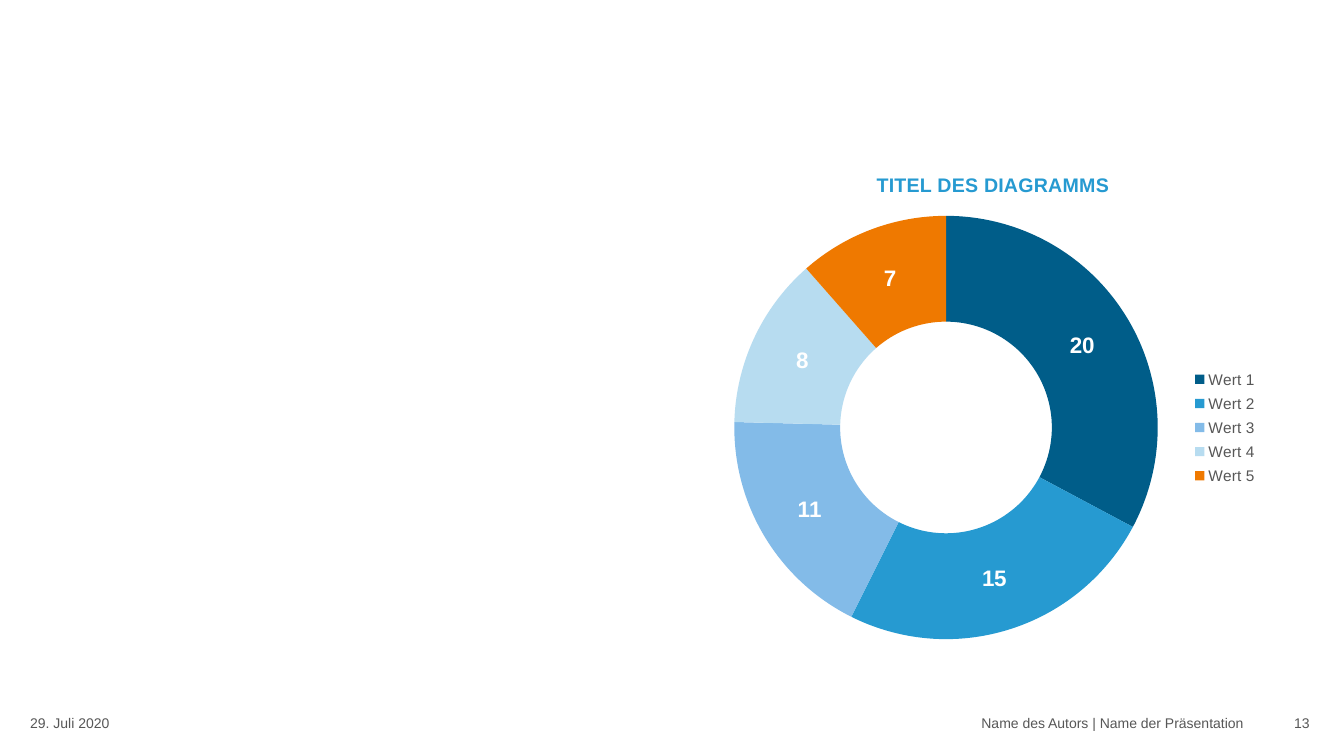
"""Build a slide with a doughnut chart and a footer line."""
from dataclasses import dataclass

from pptx import Presentation
from pptx.chart.chart import Chart
from pptx.chart.data import CategoryChartData
from pptx.dml.color import RGBColor
from pptx.enum.chart import XL_CHART_TYPE as ChartType, XL_LEGEND_POSITION as LegendPosition
from pptx.enum.text import MSO_ANCHOR as Anchor, PP_ALIGN as Align
from pptx.oxml import parse_xml
from pptx.oxml.ns import nsdecls, qn
from pptx.slide import Slide
from pptx.text.text import Font
from pptx.util import Inches, Pt

FONT_NAME = "Arial"
GREY = RGBColor(0x57, 0x57, 0x57)
WHITE = RGBColor(0xFF, 0xFF, 0xFF)
DARK_BLUE = RGBColor(0x00, 0x5D, 0x89)
BLUE = RGBColor(0x26, 0x9A, 0xD1)
SOFT_BLUE = RGBColor(0x83, 0xBB, 0xE8)
PALE_BLUE = RGBColor(0xB7, 0xDC, 0xF0)
ORANGE = RGBColor(0xEF, 0x79, 0x00)
FOOTER_TOP = 7.09
FOOTER_HEIGHT = 0.39
HOLE_PERCENT = 55


@dataclass(frozen=True)
class FooterField:
    text: str
    left: float
    width: float
    align: Align


@dataclass(frozen=True)
class Segment:
    label: str
    value: int
    color: RGBColor


FOOTER_FIELDS = (
    FooterField("29. Juli 2020", 0.3, 2.36, Align.LEFT),
    FooterField("Name des Autors | Name der Präsentation", 2.49, 9.84, Align.RIGHT),
    FooterField("13", 12.36, 0.63, Align.RIGHT),
)
SEGMENTS = (
    Segment("Wert 1", 20, DARK_BLUE),
    Segment("Wert 2", 15, BLUE),
    Segment("Wert 3", 11, SOFT_BLUE),
    Segment("Wert 4", 8, PALE_BLUE),
    Segment("Wert 5", 7, ORANGE),
)


def format_font(font: Font, size: int, color: RGBColor, bold: bool = False) -> None:
    font.name = FONT_NAME
    font.size = Pt(size)
    font.bold = bold
    font.color.rgb = color


def add_footer_field(slide: Slide, field: FooterField) -> None:
    shape = slide.shapes.add_textbox(
        Inches(field.left), Inches(FOOTER_TOP), Inches(field.width), Inches(FOOTER_HEIGHT)
    )
    frame = shape.text_frame
    frame.word_wrap = True
    frame.vertical_anchor = Anchor.TOP
    frame.margin_left = frame.margin_right = frame.margin_top = frame.margin_bottom = 0
    paragraph = frame.paragraphs[0]
    paragraph.alignment = field.align
    run = paragraph.add_run()
    run.text = field.text
    format_font(run.font, 10, GREY)


def place_chart_part(chart: Chart, tag: str, index: int, **fractions: float) -> None:
    part = next(chart.element.iter(qn(tag)))
    for layout in part.findall(qn("c:layout")):
        part.remove(layout)
    target = '<c:layoutTarget val="inner"/>' if tag == "c:plotArea" else ""
    modes = "".join(f'<c:{axis}Mode val="edge"/>' for axis in "xy")
    sizes = "".join(f'<c:{name} val="{value}"/>' for name, value in fractions.items())
    part.insert(index, parse_xml(
        f'<c:layout {nsdecls("c")}><c:manualLayout>{target}{modes}{sizes}'
        "</c:manualLayout></c:layout>"
    ))


def add_doughnut(slide: Slide) -> None:
    data = CategoryChartData()
    data.categories = [segment.label for segment in SEGMENTS]
    data.add_series("Series 1", [segment.value for segment in SEGMENTS])
    chart = slide.shapes.add_chart(
        ChartType.DOUGHNUT, Inches(6.71), Inches(1.46), Inches(6.29), Inches(5.25), data
    ).chart
    format_font(chart.font, 10, GREY)

    run = chart.chart_title.text_frame.paragraphs[0].add_run()
    run.text = "TITEL DES DIAGRAMMS"
    format_font(run.font, 14, BLUE, bold=True)
    chart.chart_title.include_in_layout = False

    chart.has_legend = True
    chart.legend.position = LegendPosition.RIGHT
    chart.legend.include_in_layout = False
    format_font(chart.legend.font, 11, GREY)

    plot = chart.plots[0]
    plot.vary_by_categories = True
    next(chart.element.iter(qn("c:holeSize"))).set("val", str(HOLE_PERCENT))
    for index, segment in enumerate(SEGMENTS):
        point = plot.series[0].points[index]
        point.format.fill.solid()
        point.format.fill.fore_color.rgb = segment.color
        point.format.line.fill.background()
    labels = plot.series[0].data_labels
    labels.show_value = True
    labels.show_percentage = False
    format_font(labels.font, 16, WHITE, bold=True)

    place_chart_part(chart, "c:title", 1, x=0.31, y=0.04)
    place_chart_part(chart, "c:plotArea", 0, x=0.09, y=0.13, w=0.67, h=0.8)
    place_chart_part(chart, "c:legend", 1, x=0.8, y=0.41, w=0.13, h=0.24)


def main() -> None:
    presentation = Presentation()
    presentation.slide_width = Inches(13.33)
    presentation.slide_height = Inches(7.5)
    slide = presentation.slides.add_slide(presentation.slide_layouts[6])
    for field in FOOTER_FIELDS:
        add_footer_field(slide, field)
    add_doughnut(slide)
    presentation.save("out.pptx")


if __name__ == "__main__":
    main()
